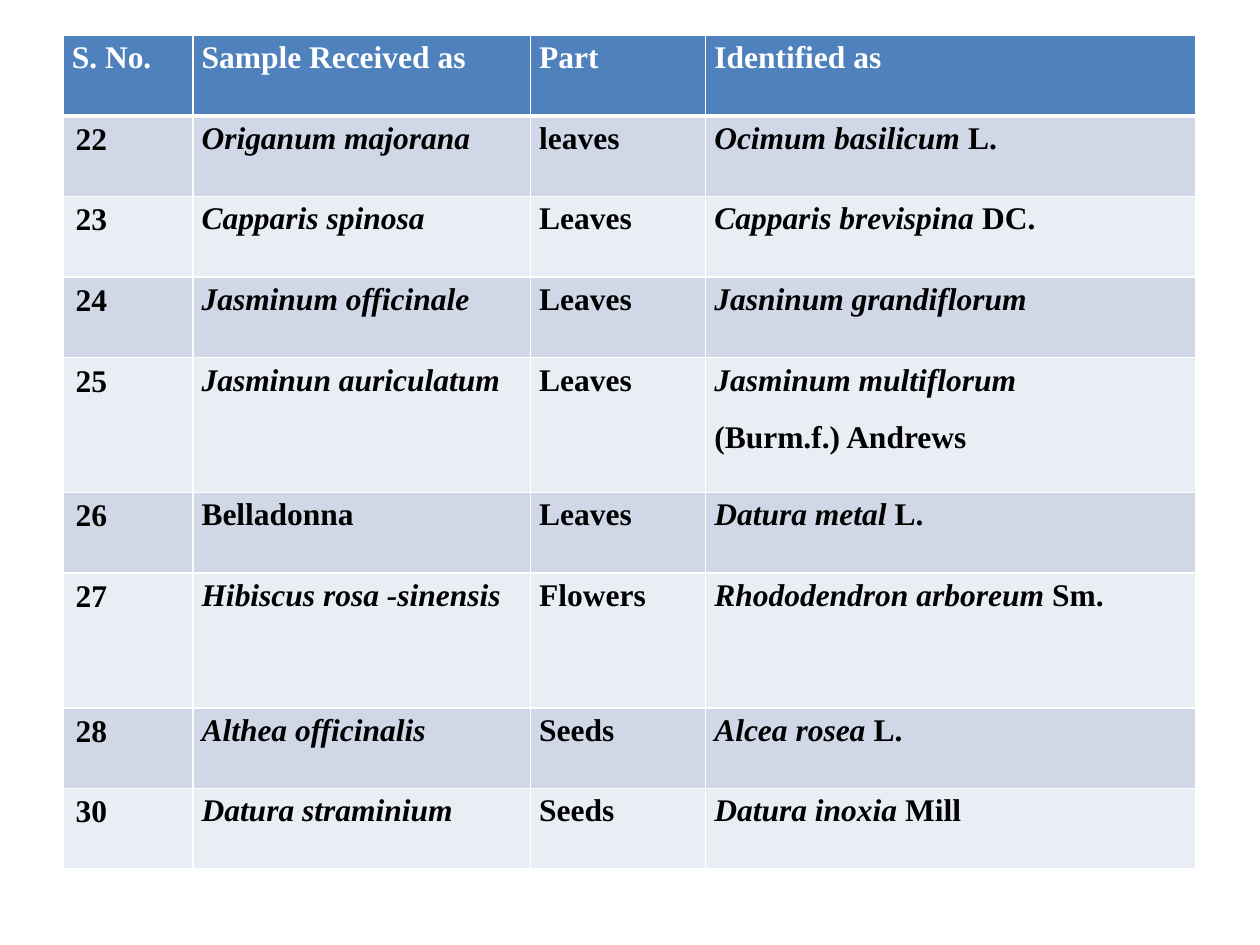
from dataclasses import dataclass

from lxml import etree
from pptx import Presentation
from pptx.dml.color import RGBColor
from pptx.oxml.ns import qn
from pptx.util import Inches, Pt

BLANK_LAYOUT = 6


@dataclass(frozen=True)
class Theme:
    font: str = "Times New Roman"
    size: int = 18
    header_fill: str = "4F81BD"
    header_text: str = "FFFFFF"
    body_text: str = "000000"
    bands: tuple = ("D0D8E8", "E9EDF4")
    border: str = "FFFFFF"
    thin: int = 1
    thick: int = 3


THEME = Theme()
COLUMN_WIDTHS = (1.03, 2.68, 1.39, 3.89)
ROW_HEIGHT, TALL_ROW_HEIGHT = 0.64, 1.07
TALL_SAMPLES = ("25", "27")

HEADINGS = ("S. No.", "Sample Received as", "Part", "Identified as")
# Asterisks enclose italic names; a line break starts a new paragraph.
SAMPLES = (
    ("22", "*Origanum majorana*", "leaves", "*Ocimum basilicum *L."),
    ("23", "*Capparis spinosa*", "Leaves", "*Capparis brevispina *DC."),
    ("24", "*Jasminum officinale*", "Leaves", "*Jasninum grandiflorum*"),
    ("25", "*Jasminun auriculatum*", "Leaves",
     "*Jasminum multiflorum*\n(Burm.f.) Andrews"),
    ("26", "Belladonna", "Leaves", "*Datura metal *L."),
    ("27", "*Hibiscus rosa -sinensis*", "Flowers", "*Rhododendron arboreum* Sm."),
    ("28", "*Althea officinalis*", "Seeds", "*Alcea rosea *L."),
    ("30", "*Datura straminium*", "Seeds", "*Datura inoxia *Mill"),
)


def write_text(frame, text, *, color, line_spacing=None, space_before=None):
    """Write bold text in which asterisks switch italics on and off."""
    for index, line in enumerate(text.split("\n")):
        paragraph = frame.add_paragraph() if index else frame.paragraphs[0]
        paragraph.line_spacing = line_spacing
        paragraph.space_before = space_before
        for position, part in enumerate(line.split("*")):
            if not part:
                continue
            run = paragraph.add_run()
            run.text = part
            run.font.name = THEME.font
            run.font.size = Pt(THEME.size)
            run.font.bold = True
            run.font.italic = position % 2 == 1
            run.font.color.rgb = RGBColor.from_string(color)


def set_borders(cell, top, bottom):
    properties = cell._tc.get_or_add_tcPr()
    widths = {"L": THEME.thin, "R": THEME.thin, "T": top, "B": bottom}
    for side, width in widths.items():
        line = etree.SubElement(properties, qn(f"a:ln{side}"), w=str(Pt(width)))
        fill = etree.SubElement(line, qn("a:solidFill"))
        etree.SubElement(fill, qn("a:srgbClr"), val=THEME.border)


def format_cell(cell, text, row, is_number):
    is_header = row == 0
    set_borders(cell,
                top=THEME.thick if row == 1 else THEME.thin,
                bottom=THEME.thick if is_header else THEME.thin)
    fill = THEME.header_fill if is_header else THEME.bands[(row - 1) % 2]
    cell.fill.solid()
    cell.fill.fore_color.rgb = RGBColor.from_string(fill)
    color = THEME.header_text if is_header else THEME.body_text
    if is_number:
        write_text(cell.text_frame, text, color=color)
        return
    cell.margin_left = cell.margin_right = Inches(0.07)
    cell.margin_top = cell.margin_bottom = 0
    write_text(cell.text_frame, text, color=color,
               line_spacing=1.15, space_before=Pt(10))


def add_sample_table(slide):
    rows = (HEADINGS, *SAMPLES)
    heights = [TALL_ROW_HEIGHT if row[0] in TALL_SAMPLES else ROW_HEIGHT
               for row in rows]
    table = slide.shapes.add_table(
        len(rows), len(HEADINGS), Inches(0.5), Inches(0.28),
        Inches(sum(COLUMN_WIDTHS)), Inches(sum(heights))).table
    for column, width in zip(table.columns, COLUMN_WIDTHS):
        column.width = Inches(width)
    for r, (texts, height) in enumerate(zip(rows, heights)):
        table.rows[r].height = Inches(height)
        for c, text in enumerate(texts):
            format_cell(table.cell(r, c), text, r, is_number=r > 0 and c == 0)


def main():
    presentation = Presentation()
    presentation.slide_width = Inches(10)
    presentation.slide_height = Inches(7.5)
    slide = presentation.slides.add_slide(presentation.slide_layouts[BLANK_LAYOUT])
    add_sample_table(slide)
    presentation.save("out.pptx")


if __name__ == "__main__":
    main()
